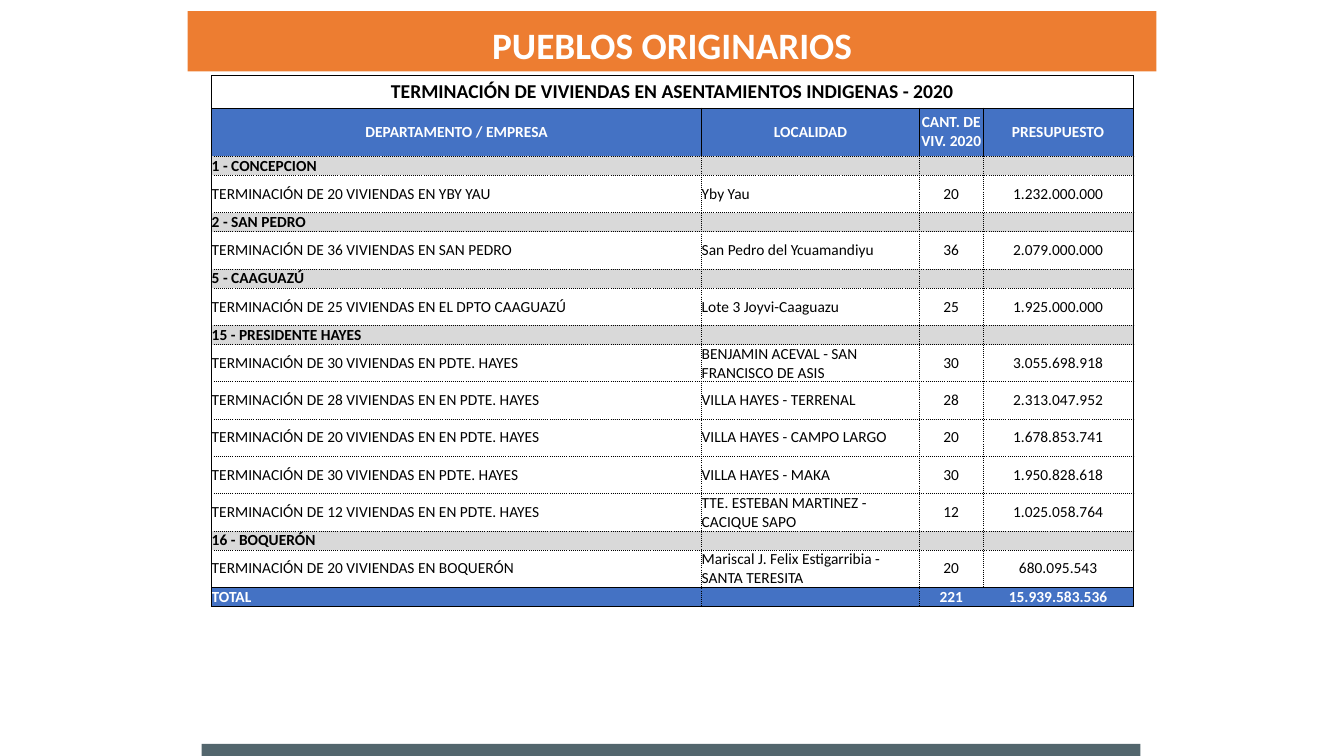
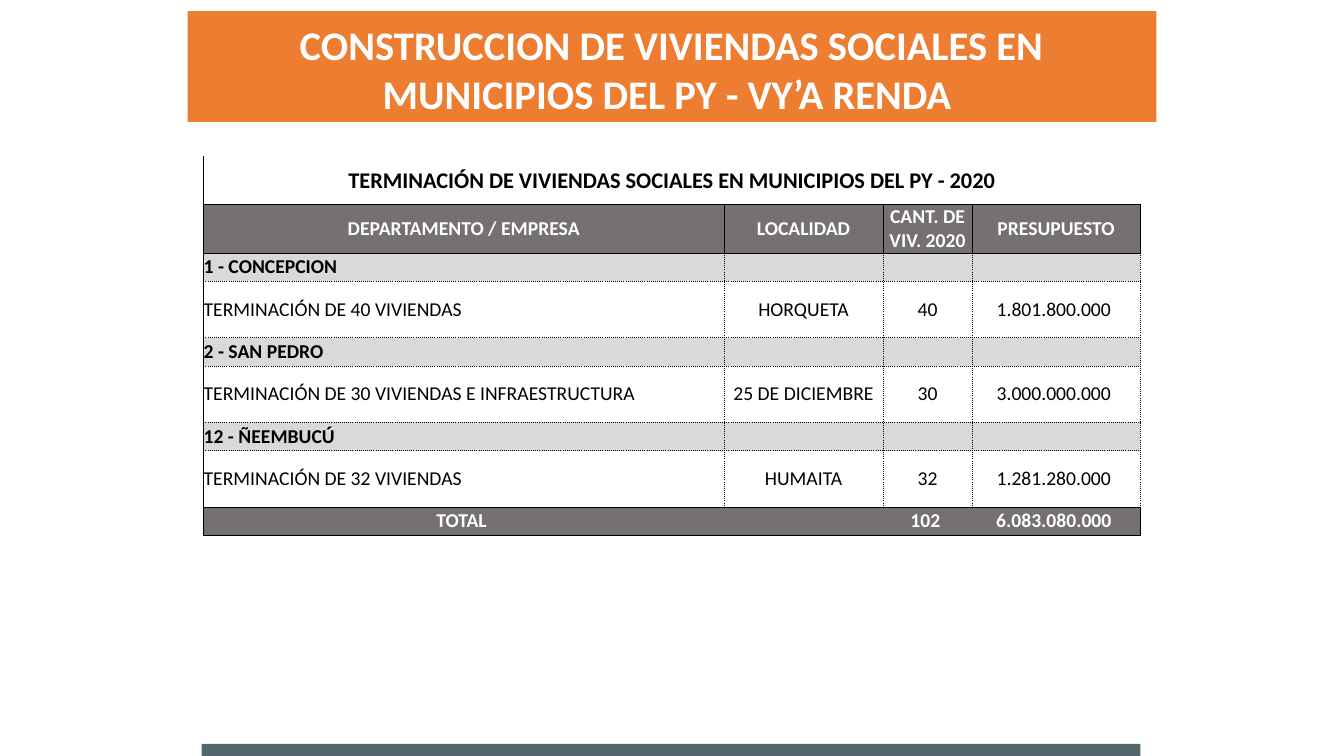
from dataclasses import dataclass

from lxml import etree
from pptx import Presentation
from pptx.dml.color import RGBColor
from pptx.enum import shapes, text
from pptx.oxml import ns
from pptx.util import Inches, Pt

WHITE = RGBColor(0xFF, 0xFF, 0xFF)
BLACK = RGBColor(0x00, 0x00, 0x00)
ORANGE = RGBColor(0xED, 0x7D, 0x31)
SLATE = RGBColor(0x53, 0x66, 0x6D)
BLUE = RGBColor(0x44, 0x72, 0xC4)
GREY = RGBColor(0x75, 0x71, 0x71)
SILVER = RGBColor(0xD9, 0xD9, 0xD9)

LEFT = text.PP_ALIGN.LEFT
CENTER = text.PP_ALIGN.CENTER
SOLID, DOTTED = "solid", "sysDot"
FONT = "Calibri"
HEADINGS = ("DEPARTAMENTO / EMPRESA", "LOCALIDAD", "CANT. DE VIV. 2020", "PRESUPUESTO")


@dataclass
class TableLook:
    accent: RGBColor
    size: int
    caption_size: int
    widths: tuple
    caption_height: float
    group_height: float
    work_height: float
    place_align: int
    total_align: int
    caption_edges: dict
    header_bottom: str
    right_edge: str
    total_dividers: tuple

    def height(self, kind):
        heights = {"caption": self.caption_height, "header": 0.48, "work": self.work_height}
        return Inches(heights.get(kind, self.group_height))

    def align(self, kind, column):
        if kind in ("caption", "header") or column > 1:
            return CENTER
        if kind == "total":
            return self.total_align
        return self.place_align if column == 1 else LEFT

    def fill(self, kind):
        return {"header": self.accent, "group": SILVER, "total": self.accent}.get(kind)

    def edges(self, kinds, row, column):
        kind = kinds[row]
        if kind == "caption":
            return self.caption_edges
        if kind == "header":
            return {"L": SOLID, "R": SOLID, "T": SOLID, "B": self.header_bottom}
        if kind == "total":
            dividers = (SOLID, *self.total_dividers, SOLID)
            return {"L": dividers[column], "R": dividers[column + 1], "T": SOLID, "B": SOLID}
        return {
            "L": DOTTED if column else SOLID,
            "R": self.right_edge if column == 3 else DOTTED,
            "T": self.header_bottom if kinds[row - 1] == "header" else DOTTED,
            "B": SOLID if kinds[row + 1] == "total" else DOTTED,
        }


class Report:
    def __init__(self):
        self.deck = Presentation()
        self.deck.slide_width, self.deck.slide_height = Inches(13.33), Inches(7.5)
        self.page = None

    def add_page(self):
        self.page = self.deck.slides.add_slide(self.deck.slide_layouts[6])
        self.band(2, 7.38, 9.31, 0.12, SLATE)

    def band(self, left, top, width, height, color):
        band = self.page.shapes.add_shape(
            shapes.MSO_SHAPE.RECTANGLE, Inches(left), Inches(top), Inches(width), Inches(height))
        band.shadow.inherit = False
        band.fill.solid()
        band.fill.fore_color.rgb = color
        band.line.fill.background()

    def set_words(self, paragraph, words, size, color, align=CENTER, bold=True):
        if words:
            paragraph.add_run().text = words
        paragraph.alignment = align
        font = paragraph.font
        font.name, font.size, font.bold = FONT, Pt(size), bold
        font.color.rgb = color
        if not words:
            etree.SubElement(paragraph._p, ns.qn("a:endParaRPr"), sz=str(size * 100))

    def title(self, words, size, band_height, place, anchor, inset):
        self.band(1.86, 0.11, 9.61, band_height, ORANGE)
        box = self.page.shapes.add_textbox(*map(Inches, place))
        frame = box.text_frame
        frame.word_wrap = True
        frame.vertical_anchor = anchor
        frame.margin_left = frame.margin_right = Inches(inset)
        frame.margin_top = frame.margin_bottom = Inches(0.05)
        self.set_words(frame.paragraphs[0], words, size, WHITE)

    def border(self, cell, edges):
        properties = cell._tc.get_or_add_tcPr()
        for side in "LRTB":
            dash = edges.get(side)
            line = etree.SubElement(properties, ns.qn(f"a:ln{side}"), w=str(Pt(0.5)))
            if dash is None:
                etree.SubElement(line, ns.qn("a:noFill"))
                continue
            fill = etree.SubElement(line, ns.qn("a:solidFill"))
            etree.SubElement(fill, ns.qn("a:srgbClr"), val=str(BLACK))
            etree.SubElement(line, ns.qn("a:prstDash"), val=dash)

    def cell(self, cell, words, kind, column, look, edges):
        cell.margin_left = cell.margin_right = cell.margin_top = cell.margin_bottom = 0
        cell.vertical_anchor = text.MSO_ANCHOR.MIDDLE
        self.border(cell, edges)
        fill = look.fill(kind)
        if fill is None:
            cell.fill.background()
        else:
            cell.fill.solid()
            cell.fill.fore_color.rgb = fill
        self.set_words(
            cell.text_frame.paragraphs[0], words,
            look.caption_size if kind == "caption" else look.size,
            WHITE if kind in ("header", "total") else BLACK,
            look.align(kind, column), kind != "work")

    def table(self, left, top, look, caption, works, total):
        rows = [("caption", (caption,)), ("header", HEADINGS)]
        rows += [("group" if len(work) == 1 else "work", work) for work in works]
        rows.append(("total", total))
        kinds = [kind for kind, _ in rows]
        heights = [look.height(kind) for kind in kinds]
        table = self.page.shapes.add_table(
            len(rows), len(look.widths), Inches(left), Inches(top),
            Inches(sum(look.widths)), sum(heights)).table
        table.first_row = table.horz_banding = False
        for column, width in zip(table.columns, look.widths):
            column.width = Inches(width)
        table.cell(0, 0).merge(table.cell(0, len(look.widths) - 1))
        for row, (kind, values) in enumerate(rows):
            table.rows[row].height = heights[row]
            for column in range(len(look.widths)):
                words = values[column] if column < len(values) else ""
                self.cell(table.cell(row, column), words, kind, column, look,
                          look.edges(kinds, row, column))


INDIGENOUS_LOOK = TableLook(
    accent=BLUE, size=11, caption_size=14, widths=(4.86, 2.16, 0.63, 1.49),
    caption_height=0.32, group_height=0.19, work_height=0.37,
    place_align=LEFT, total_align=LEFT, caption_edges=dict.fromkeys("LRTB", SOLID),
    header_bottom=DOTTED, right_edge=SOLID, total_dividers=(DOTTED, DOTTED, None))

MUNICIPAL_LOOK = TableLook(
    accent=GREY, size=14, caption_size=16, widths=(5.16, 1.58, 0.88, 1.67),
    caption_height=0.48, group_height=0.28, work_height=0.56,
    place_align=CENTER, total_align=CENTER, caption_edges={"L": SOLID, "B": SOLID},
    header_bottom=SOLID, right_edge=DOTTED, total_dividers=(None, None, None))

INDIGENOUS_WORKS = (
    ("1 - CONCEPCION",),
    ("TERMINACIÓN DE 20 VIVIENDAS EN YBY YAU", "Yby Yau", "20", "1.232.000.000"),
    ("2 - SAN PEDRO",),
    ("TERMINACIÓN DE 36 VIVIENDAS EN SAN PEDRO", "San Pedro del Ycuamandiyu", "36", "2.079.000.000"),
    ("5 - CAAGUAZÚ",),
    ("TERMINACIÓN DE 25 VIVIENDAS EN EL DPTO CAAGUAZÚ", "Lote 3 Joyvi-Caaguazu", "25", "1.925.000.000"),
    ("15 - PRESIDENTE HAYES",),
    ("TERMINACIÓN DE 30 VIVIENDAS EN PDTE. HAYES", "BENJAMIN ACEVAL - SAN FRANCISCO DE ASIS",
     "30", "3.055.698.918"),
    ("TERMINACIÓN DE 28 VIVIENDAS EN EN PDTE. HAYES", "VILLA HAYES - TERRENAL", "28", "2.313.047.952"),
    ("TERMINACIÓN DE 20 VIVIENDAS EN EN PDTE. HAYES", "VILLA HAYES - CAMPO LARGO", "20", "1.678.853.741"),
    ("TERMINACIÓN DE 30 VIVIENDAS EN PDTE. HAYES", "VILLA HAYES - MAKA", "30", "1.950.828.618"),
    ("TERMINACIÓN DE 12 VIVIENDAS EN EN PDTE. HAYES", "TTE. ESTEBAN MARTINEZ - CACIQUE SAPO",
     "12", "1.025.058.764"),
    ("16 - BOQUERÓN",),
    ("TERMINACIÓN DE 20 VIVIENDAS EN BOQUERÓN", "Mariscal J. Felix Estigarribia - SANTA TERESITA",
     "20", "680.095.543"),
)

MUNICIPAL_WORKS = (
    ("1 - CONCEPCION",),
    ("TERMINACIÓN DE 40 VIVIENDAS", "HORQUETA", "40", "1.801.800.000 "),
    ("2 - SAN PEDRO",),
    ("TERMINACIÓN DE 30 VIVIENDAS E INFRAESTRUCTURA", "25 DE DICIEMBRE", "30", "3.000.000.000 "),
    ("12 - ÑEEMBUCÚ",),
    ("TERMINACIÓN DE 32 VIVIENDAS", "HUMAITA", "32", "1.281.280.000 "),
)


def main():
    report = Report()

    report.add_page()
    report.title("PUEBLOS ORIGINARIOS", 26.6, 0.6, (1.67, 0.17, 10, 0.55), text.MSO_ANCHOR.MIDDLE, 0.05)
    report.table(2.1, 0.75, INDIGENOUS_LOOK, "TERMINACIÓN DE VIVIENDAS EN ASENTAMIENTOS INDIGENAS - 2020",
                 INDIGENOUS_WORKS, ("TOTAL", "", "221", "15.939.583.536"))

    report.add_page()
    report.title("CONSTRUCCION DE VIVIENDAS SOCIALES EN MUNICIPIOS DEL PY - VY’A RENDA ",
                 29, 1.1, (2.5, 0.15, 8.33, 1.08), text.MSO_ANCHOR.TOP, 0.1)
    report.table(2.02, 1.55, MUNICIPAL_LOOK, "TERMINACIÓN DE VIVIENDAS SOCIALES EN MUNICIPIOS DEL PY - 2020",
                 MUNICIPAL_WORKS, ("TOTAL ", "", "102 ", "6.083.080.000 "))

    report.deck.save("out.pptx")


if __name__ == "__main__":
    main()
